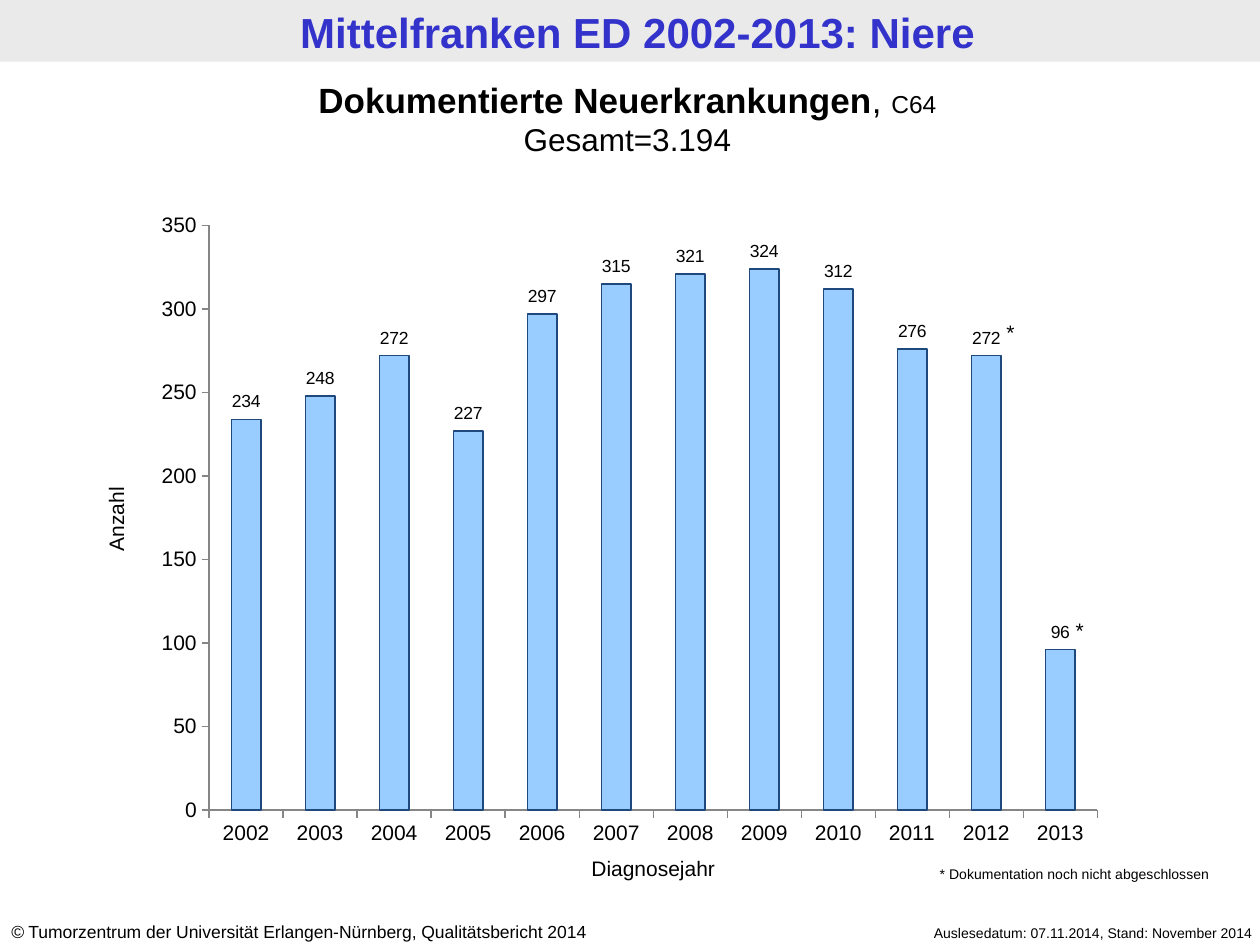
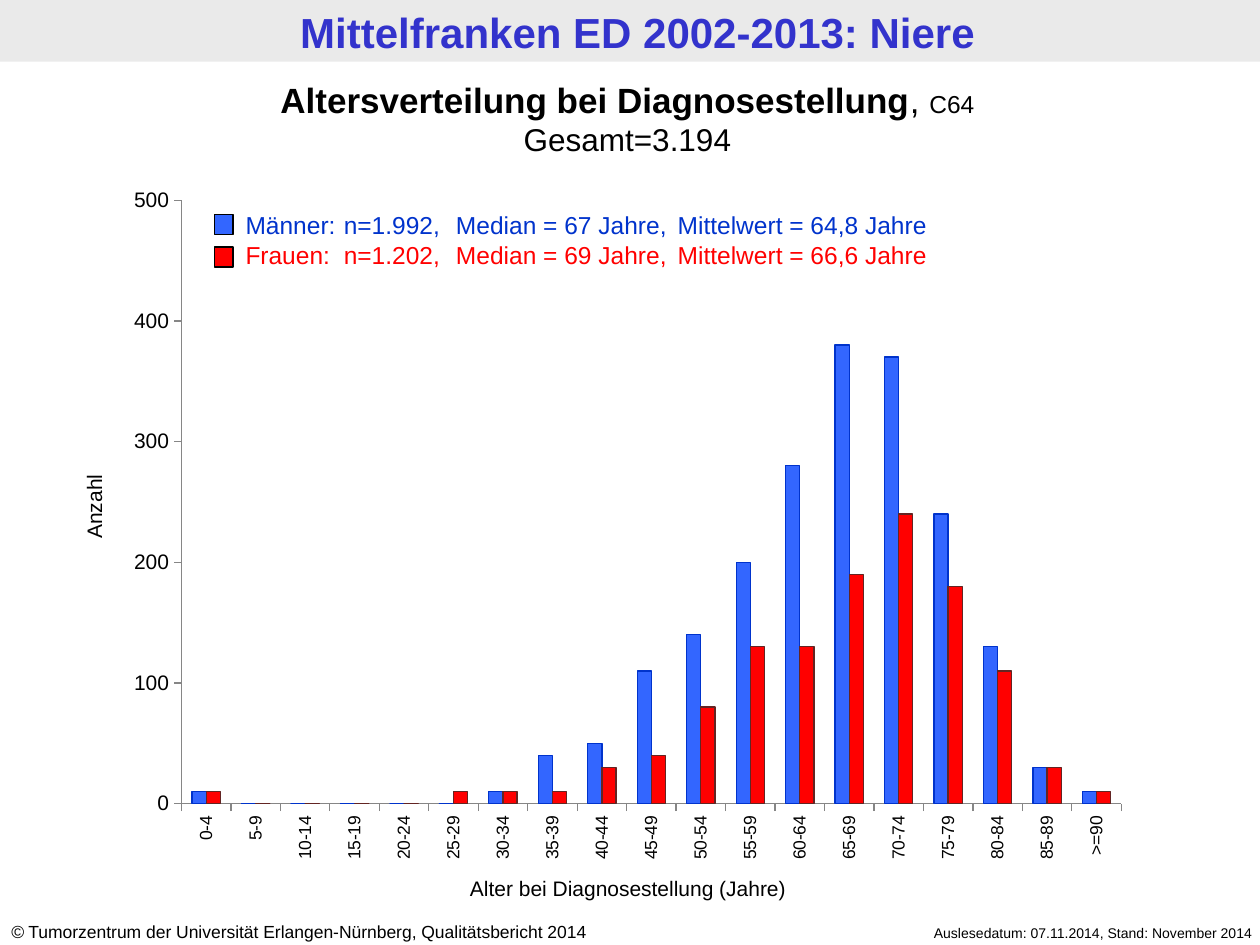
"""Build two slides on kidney cancer cases in Mittelfranken: new cases per year and age distribution."""
from pptx import Presentation
from pptx.chart.data import CategoryChartData
from pptx.dml.color import RGBColor
from pptx.enum.chart import XL_CHART_TYPE, XL_LABEL_POSITION, XL_TICK_MARK
from pptx.enum.shapes import MSO_SHAPE
from pptx.enum.text import PP_ALIGN
from pptx.oxml import parse_xml
from pptx.oxml.ns import nsdecls, qn
from pptx.util import Inches, Pt

COLOURS = {
    "band": "EAEAEA", "title": "3333CC", "text": "000000", "axis": "868686",
    "cases": "99CCFF", "cases_line": "1F497D",
    "men": "3366FF", "men_line": "0033CC", "women": "FF0000", "women_line": "632523",
}
COLOURS = {name: RGBColor.from_string(value) for name, value in COLOURS.items()}
FONT = "Arial"


def add_text(slide, box, paragraphs, size, alignment=PP_ALIGN.LEFT, rotation=0):
    """Add a text box whose paragraphs are lists of (text, font settings)."""
    shape = slide.shapes.add_textbox(*map(Inches, box))
    shape.rotation = rotation
    frame = shape.text_frame
    frame.word_wrap = True
    for index, runs in enumerate(paragraphs):
        paragraph = frame.add_paragraph() if index else frame.paragraphs[0]
        paragraph.alignment = alignment
        for text, settings in runs:
            run = paragraph.add_run()
            run.text = text
            run.font.name = FONT
            run.font.size = Pt(size)
            run.font.color.rgb = COLOURS["text"]
            for name, value in settings.items():
                setattr(run.font, name, value)
    return shape


def make_layout(modes, **values):
    """Return a chart layout element with the given modes and fractions."""
    numbers = "".join(f'<c:{name} val="{value:.4f}"/>' for name, value in values.items())
    return parse_xml(f'<c:layout {nsdecls("c")}><c:manualLayout>{modes}{numbers}</c:manualLayout></c:layout>')


INNER_EDGES = '<c:layoutTarget val="inner"/><c:xMode val="edge"/><c:yMode val="edge"/>'
NO_LEADER_LINES = (
    f'<c:extLst {nsdecls("c")}><c:ext uri="{{CE6537A1-D6FC-4f65-9D91-7224C49458BB}}" '
    'xmlns:c15="http://schemas.microsoft.com/office/drawing/2012/chart">'
    '<c15:showLeaderLines val="0"/></c:ext></c:extLst>'
)

SLIDES = [
    {
        "heading": "Dokumentierte Neuerkrankungen",
        "type": XL_CHART_TYPE.COLUMN_STACKED,
        "frame": (1.15, 1.64, 7.71, 5.14),
        "plot": (1.66, 1.79, 7.05, 4.64),
        "maximum": 350, "step": 50, "overlap": 100, "category_size": 12,
        "categories": [str(year) for year in range(2002, 2014)],
        "series": [("Neuerkrankungen", "cases",
                    [234, 248, 272, 227, 297, 315, 321, 324, 312, 276, 272, 96])],
        "category_title": ("Diagnosejahr", (4.06, 6.74, 2.25, 0.3)),
        "value_title_box": (0.31, 3.97, 1.22, 0.3),
    },
    {
        "heading": "Altersverteilung bei Diagnosestellung",
        "type": XL_CHART_TYPE.COLUMN_CLUSTERED,
        "frame": (0.91, 1.39, 8.16, 5.55),
        "plot": (1.44, 1.59, 7.46, 4.79),
        "maximum": 500, "step": 100, "overlap": 0, "category_size": 10,
        "categories": [f"{age}-{age + 4}" for age in range(0, 90, 5)] + [">=90"],
        "series": [
            ("Männer", "men", [10, 0, 0, 0, 0, 0, 10, 40, 50, 110, 140, 200, 280, 380, 370, 240, 130, 30, 10]),
            ("Frauen", "women", [10, 0, 0, 0, 0, 10, 10, 10, 30, 40, 80, 130, 130, 190, 240, 180, 110, 30, 10]),
        ],
        "category_title": ("Alter bei Diagnosestellung (Jahre)", (3.45, 6.9, 3.07, 0.3)),
        "value_title_box": (-0.56, 3.87, 2.61, 0.3),
    },
]

presentation = Presentation()
presentation.slide_width, presentation.slide_height = Inches(10), Inches(7.5)
layout = presentation.slide_layouts[5]
slides = [presentation.slides.add_slide(layout) for content in SLIDES]

band = slides[0].shapes.add_shape(MSO_SHAPE.RECTANGLE, 0, 0, Inches(10), Inches(0.49))
band.shadow.inherit = False
band.fill.solid()
band.fill.fore_color.rgb = COLOURS["band"]
band.line.fill.background()
date_note = add_text(slides[0], (6.65, 7.29, 3.39, 0.24),
                     [[("Auslesedatum: 07.11.2014, Stand: November 2014", {})]], 8, PP_ALIGN.RIGHT)
copyright_note = add_text(slides[0], (-0.01, 7.26, 5.24, 0.27), [[
    ("©", {"italic": True}),
    (" Tumorzentrum der Universität Erlangen-Nürnberg, Qualitätsbericht 2014", {}),
]], 10)
for shape in (band, date_note, copyright_note):
    layout.shapes.element.append(shape.element)

for slide, content in zip(slides, SLIDES):
    title = slide.shapes.title
    title.left, title.top, title.width, title.height = map(Inches, (0.06, 0.01, 10, 0.49))
    title.text_frame.text = "Mittelfranken ED 2002-2013: Niere"
    title.text_frame.paragraphs[0].alignment = PP_ALIGN.CENTER
    title_font = title.text_frame.paragraphs[0].runs[0].font
    title_font.name, title_font.size, title_font.bold = FONT, Pt(24), True
    title_font.color.rgb = COLOURS["title"]

    chart_data = CategoryChartData()
    chart_data.categories = content["categories"]
    for name, colour, values in content["series"]:
        chart_data.add_series(name, values)
    left, top, width, height = content["frame"]
    chart = slide.shapes.add_chart(content["type"], *map(Inches, content["frame"]), chart_data).chart
    chart.has_legend = chart.has_title = False
    chart.font.name, chart.font.size = FONT, Pt(12)
    chart.font.color.rgb = COLOURS["text"]
    chart.value_axis.minimum_scale = 0
    chart.value_axis.maximum_scale = content["maximum"]
    chart.value_axis.major_unit = content["step"]
    chart.category_axis.tick_labels.font.size = Pt(content["category_size"])
    for axis in (chart.category_axis, chart.value_axis):
        axis.has_major_gridlines = False
        axis.major_tick_mark = XL_TICK_MARK.OUTSIDE
        axis.minor_tick_mark = XL_TICK_MARK.NONE
        axis.format.line.color.rgb = COLOURS["axis"]
        axis.format.line.width = Pt(0.75)

    plot = chart.plots[0]
    plot.vary_by_categories = False
    plot.gap_width, plot.overlap = 150, content["overlap"]
    for series, (name, colour, values) in zip(plot.series, content["series"]):
        series.format.fill.solid()
        series.format.fill.fore_color.rgb = COLOURS[colour]
        series.format.line.color.rgb = COLOURS[colour + "_line"]
        series.format.line.width = Pt(0.75)

    plot_area = chart.element.find(".//" + qn("c:plotArea"))
    for automatic_layout in plot_area.findall(qn("c:layout")):
        plot_area.remove(automatic_layout)
    plot_left, plot_top, plot_width, plot_height = content["plot"]
    plot_area.insert(0, make_layout(
        INNER_EDGES, x=(plot_left - left) / width, y=(plot_top - top) / height,
        w=plot_width / width, h=plot_height / height))

    add_text(slide, (-0.04, 0.57, 10.04, 0.74), [
        [(content["heading"], {"bold": True}), (", ", {}), ("C64", {"size": Pt(14)})],
        [("Gesamt=3.194", {"size": Pt(18)})],
    ], 20, PP_ALIGN.CENTER)
    category_title, category_box = content["category_title"]
    add_text(slide, category_box, [[(category_title, {})]], 12, PP_ALIGN.CENTER)
    add_text(slide, content["value_title_box"], [[("Anzahl", {})]], 12, PP_ALIGN.CENTER, 270)

cases_slide, age_slide = slides
cases_chart = next(shape.chart for shape in cases_slide.shapes if shape.has_chart)
cases_series = cases_chart.plots[0].series[0]
for index in range(len(cases_series.values)):
    label = cases_series.points[index].data_label
    label.font.size = Pt(10)
    label.position = XL_LABEL_POSITION.CENTER
chart_height, plot_height = SLIDES[0]["frame"][3], SLIDES[0]["plot"][3]
for label, value in zip(cases_chart.element.iter(qn("c:dLbl")), cases_series.values):
    rise = value / SLIDES[0]["maximum"] * plot_height / 2 + 0.14
    label.insert(1, make_layout("", x=0, y=-rise / chart_height))
case_labels = cases_chart.element.find(".//" + qn("c:dLbls"))
for leader_lines in case_labels.findall(qn("c:showLeaderLines")):
    leader_lines.set("val", "0")
case_labels.append(parse_xml(NO_LEADER_LINES))

for star_left, star_top in ((7.76, 2.49), (8.31, 4.85)):
    add_text(cases_slide, (star_left, star_top, 0.39, 0.3), [[("*", {})]], 12, PP_ALIGN.RIGHT)
add_text(cases_slide, (7.36, 6.82, 2.48, 0.24), [[("* Dokumentation noch nicht abgeschlossen", {})]], 8)

age_chart = next(shape.chart for shape in age_slide.shapes if shape.has_chart)
category_text = age_chart.element.find(".//" + qn("c:catAx")).find(qn("c:txPr"))
category_text.find(qn("a:bodyPr")).set("rot", "-5400000")

legend = add_text(age_slide, (1.85, 1.62, 6.85, 0.57), [
    [("Männer:\tn=1.992,\tMedian = 67 Jahre,\tMittelwert = 64,8 Jahre", {})],
    [("Frauen:\tn=1.202,\tMedian = 69 Jahre,\tMittelwert = 66,6 Jahre", {})],
], 14)
legend_rows = (("men", "men_line", 1.7), ("women", "women", 1.96))
for paragraph, (fill, text_colour, key_top) in zip(legend.text_frame.paragraphs, legend_rows):
    paragraph.runs[0].font.color.rgb = COLOURS[text_colour]
    stops = "".join(f'<a:tab pos="{Inches(stop)}" algn="l"/>' for stop in (0.78, 1.67, 3.43))
    paragraph._p.get_or_add_pPr().append(parse_xml(f'<a:tabLst {nsdecls("a")}>{stops}</a:tabLst>'))
    key = age_slide.shapes.add_shape(MSO_SHAPE.RECTANGLE, *map(Inches, (1.7, key_top, 0.15, 0.16)))
    key.shadow.inherit = False
    key.fill.solid()
    key.fill.fore_color.rgb = COLOURS[fill]
    key.line.color.rgb = COLOURS["text"]
    key.line.width = Pt(0.75)

presentation.save("out.pptx")
